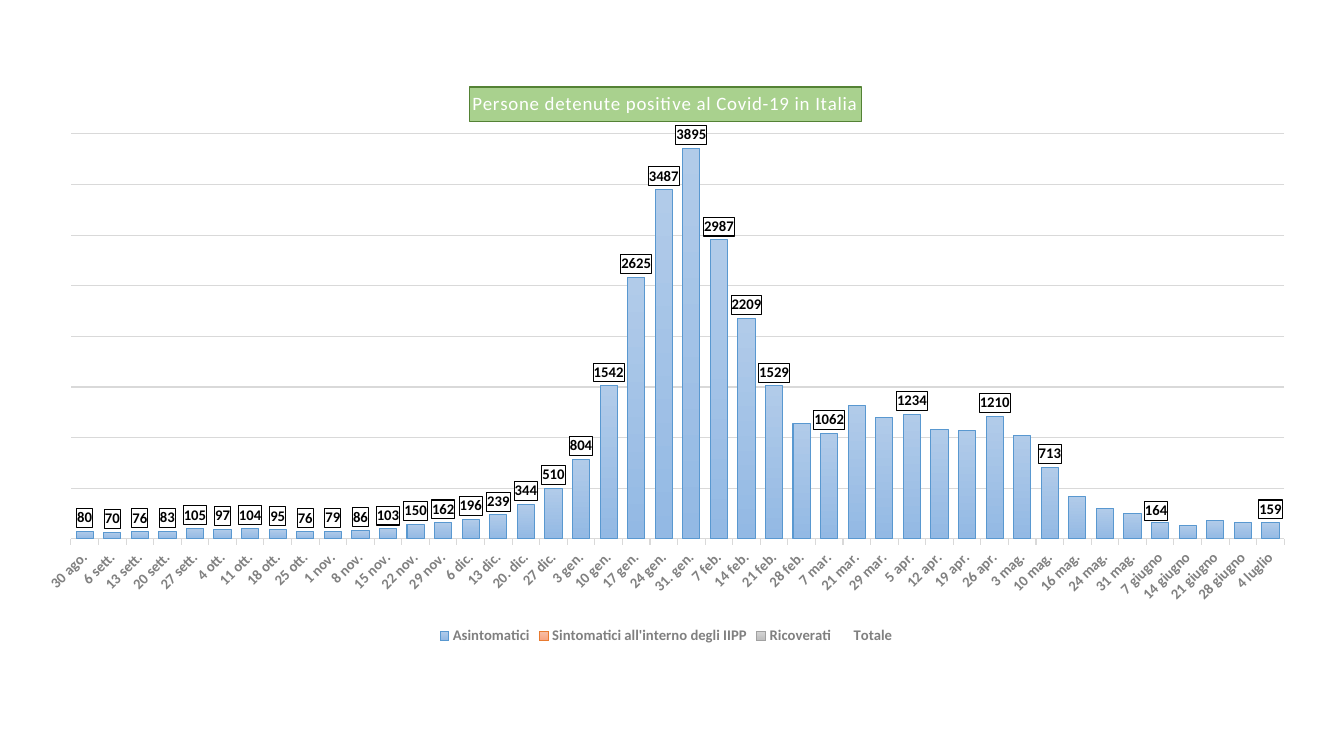
from dataclasses import dataclass

from pptx import Presentation
from pptx import util as u
from pptx.chart.data import CategoryChartData
from pptx.dml.color import RGBColor
from pptx.enum import chart as ch
from pptx.oxml import parse_xml
from pptx.oxml.ns import nsdecls, qn

TITLE = "Persone detenute positive al Covid-19 in Italia"
DATES = [
    "30 ago.", "6 sett.", "13 sett.", "20 sett.", "27 sett.", "4 ott.", "11 ott.",
    "18 ott.", "25 ott.", "1 nov.", "8 nov.", "15 nov.", "22 nov.", "29 nov.",
    "6 dic.", "13 dic.", "20. dic.", "27 dic.", "3 gen.", "10 gen.", "17 gen.",
    "24 gen.", "31. gen.", "7 feb.", "14 feb.", "21 feb.", "28 feb.", "7 mar.",
    "21 mar.", "29 mar.", "5 apr.", "12 apr.", "19 apr.", "26 apr.", "3 mag.",
    "10 mag.", "16 mag.", "24 mag.", "31 mag.", "7 giugno", "14 giugno",
    "21 giugno", "28 giugno", "4 luglio",
]
ASYMPTOMATIC = [
    75, 66, 71, 76, 100, 93, 100, 90, 71, 74, 81, 98, 146, 158, 193, 236, 339, 501,
    786, 1511, 2586, 3448, 3859, 2953, 2181, 1510, 1138, 1040, 1322, 1199, 1232,
    1078, 1068, 1208, 1020, 707, 417, 300, 254, 164, 130, 177, 158, 158,
]
TOTAL = [
    80, 70, 76, 83, 105, 97, 104, 95, 76, 79, 86, 103, 150, 162, 196, 239, 344, 510,
    804, 1542, 2625, 3487, 3895, 2987, 2209, 1529, 1160, 1062, 1341, 1208, 1234,
    1080, 1069, 1210, 1022, 713, 420, 302, 256, 164, 130, 178, 159, 159,
]
SERIES = {
    "Asintomatici": ASYMPTOMATIC,
    "Sintomatici all'interno degli IIPP": [0] * len(DATES),
    "Ricoverati": [0] * len(DATES),
    "Totale": TOTAL,
}
UNLABELLED = ["28 feb.", "21 mar.", "29 mar.", "12 apr.", "19 apr.", "3 mag.", "16 mag.",
              "24 mag.", "31 mag.", "7 giugno", "14 giugno", "21 giugno", "28 giugno"]
MOVED_LABEL = "7 giugno"

PX = 914400 / 100.8
CHART = (22, 71, 1288, 578)
PLOT = (71, 134, 1213, 405)
TITLE_AT = (469, 87)
LABEL_SHIFT = (-4, -20)


@dataclass(frozen=True)
class Theme:
    font: str = "Calibri"
    body: float = 10.5
    heading: float = 13.5
    spacing: int = 50
    thin: float = 0.75
    white: str = "FFFFFF"
    black: str = "000000"
    muted: str = "808080"
    grid: str = "D9D9D9"
    title_fill: str = "A9D18E"
    title_line: str = "548235"
    bars: tuple = (("B1CBE9", "93B9E4", "5998D0"),
                   ("F7BDA5", "F8A582", "E87A30"),
                   ("D2D2D2", "C0C0C0", "A1A1A1"))


T = Theme()


def rgb(color):
    return RGBColor.from_string(color)


def set_font(font, size, color, bold):
    font.name, font.size, font.bold = T.font, u.Pt(size), bold
    font.color.rgb = rgb(color)


def set_line(line, color):
    line.color.rgb = rgb(color)
    line.width = u.Pt(T.thin)


def set_layout(parent, index, x, y, size=None, edge=True):
    for old in parent.findall(qn("c:layout")):
        parent.remove(old)
    tags = []
    if size:
        tags.append('<c:layoutTarget val="inner"/>')
    if edge:
        tags.append('<c:xMode val="edge"/><c:yMode val="edge"/>')
    tags.append(f'<c:x val="{x / CHART[2]:.4f}"/><c:y val="{y / CHART[3]:.4f}"/>')
    if size:
        tags.append(f'<c:w val="{size[0] / CHART[2]:.4f}"/><c:h val="{size[1] / CHART[3]:.4f}"/>')
    parent.insert(index, parse_xml(
        f'<c:layout {nsdecls("c")}><c:manualLayout>{"".join(tags)}</c:manualLayout></c:layout>'))


def box_label(label, element):
    set_font(label.font, T.body, T.black, True)
    element.find(qn("c:txPr")).addprevious(parse_xml(
        f'<c:spPr {nsdecls("c", "a")}><a:solidFill><a:srgbClr val="{T.white}"/></a:solidFill>'
        f'<a:ln w="{u.Pt(T.thin)}"><a:solidFill><a:srgbClr val="{T.black}"/></a:solidFill></a:ln>'
        '</c:spPr>'))


def style_title(chart):
    title = chart.chart_title
    p = title.text_frame.paragraphs[0]
    r = p.add_run()
    r.text = TITLE
    set_font(r.font, T.heading, T.white, False)
    r.font._element.set("spc", str(T.spacing))
    title.format.fill.solid()
    title.format.fill.fore_color.rgb = rgb(T.title_fill)
    set_line(title.format.line, T.title_line)
    set_layout(title._element, 1, TITLE_AT[0] - CHART[0], TITLE_AT[1] - CHART[1])


def style_axes(chart):
    cat, val = chart.category_axis, chart.value_axis
    set_font(cat.tick_labels.font, T.body, T.muted, True)
    cat._element.find(qn("c:txPr")).find(qn("a:bodyPr")).set("rot", str(-45 * 60000))
    cat.major_tick_mark = ch.XL_TICK_MARK.OUTSIDE
    set_line(cat.format.line, T.grid)
    val.minimum_scale, val.maximum_scale, val.major_unit = 0, 4000, 500
    val.has_major_gridlines = True
    set_line(val.major_gridlines.format.line, T.grid)
    val.visible = False


def style_series(plot):
    *bars, total = plot.series
    for series, (top, bottom, edge) in zip(bars, T.bars):
        fill = series.format.fill
        fill.gradient()
        fill.gradient_angle = 270
        for stop, color in zip(fill.gradient_stops, (top, bottom)):
            stop.color.rgb = rgb(color)
        set_line(series.format.line, edge)

    total.format.fill.background()
    total.format.line.fill.background()
    labels = total.data_labels
    labels.show_value = True
    labels.position = ch.XL_LABEL_POSITION.INSIDE_BASE
    box_label(labels, labels._element)
    for position, date in enumerate(UNLABELLED):
        labels._element.insert(position, parse_xml(
            f'<c:dLbl {nsdecls("c")}><c:idx val="{DATES.index(date)}"/>'
            '<c:delete val="1"/></c:dLbl>'))

    bars[0].data_labels.show_value = False
    label = bars[0].points[DATES.index(MOVED_LABEL)].data_label
    set_font(label.font, T.body, T.black, True)
    element = bars[0].data_labels._element.find(qn("c:dLbl"))
    box_label(label, element)
    set_layout(element, 1, *LABEL_SHIFT, edge=False)


def main():
    prs = Presentation()
    prs.slide_width, prs.slide_height = u.Inches(13.33), u.Inches(7.5)
    s = prs.slides.add_slide(prs.slide_layouts[6])

    data = CategoryChartData()
    data.categories = DATES
    for name, values in SERIES.items():
        data.add_series(name, values)
    frame = s.shapes.add_chart(ch.XL_CHART_TYPE.COLUMN_STACKED,
                               *(round(v * PX) for v in CHART), data)
    chart = frame.chart
    chart.font.name, chart.font.size = T.font, u.Pt(10)
    plot = chart.plots[0]
    plot.gap_width, plot.overlap, plot.vary_by_categories = 60, 100, False

    style_title(chart)
    style_axes(chart)
    style_series(plot)
    chart.has_legend = True
    chart.legend.position = ch.XL_LEGEND_POSITION.BOTTOM
    chart.legend.include_in_layout = False
    set_font(chart.legend.font, T.body, T.muted, True)
    plot_area = chart._chartSpace.chart.plotArea
    set_layout(plot_area, 0, PLOT[0] - CHART[0], PLOT[1] - CHART[1], PLOT[2:])
    prs.save("out.pptx")


if __name__ == "__main__":
    main()
